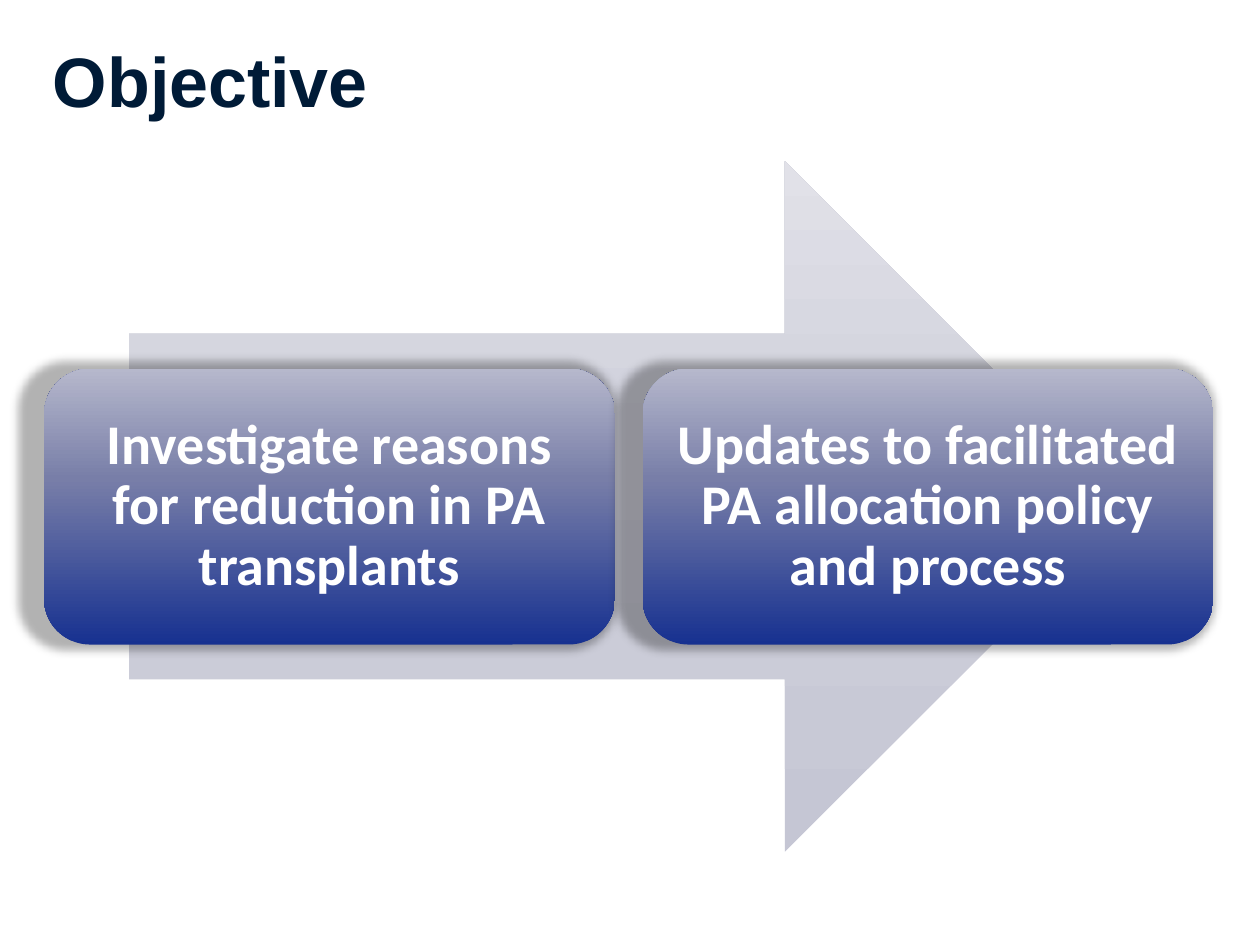
import pptx
import pptx.util
import pptx.oxml
import pptx.dml.color
import pptx.enum.shapes
import pptx.enum.text
import pptx.oxml.ns
from lxml import etree

Inches, Pt = pptx.util.Inches, pptx.util.Pt
SHAPE = pptx.enum.shapes.MSO_SHAPE
ALIGN = pptx.enum.text.PP_ALIGN
MIDDLE = pptx.enum.text.MSO_ANCHOR.MIDDLE

# Content
TITLE = "Objective"
STEPS = [
    "Investigate reasons for reduction in PA transplants",
    "Updates to facilitated PA allocation policy and process",
]

# Look
COLORS = {"title": "001B37", "step_text": "FFFFFF", "shadow": "000000"}
ARROW_STOPS = [(0, "C5C6D4"), (60, "D0D1DC"), (100, "E1E1E8")]
STEP_STOPS = [(0, "173190"), (60, "787EA8"), (100, "B6B8CC")]
TITLE_FONT = {"name": "Arial", "size": Pt(40), "bold": True}
STEP_FONT = {"name": "Calibri", "size": Pt(32), "bold": True}

# Geometry in inches
TITLE_BOX = (0.32, 0.17, 9.56, 0.93)
ARROW_BOX = (1.02, 1.28, 7.95, 5.48)
STEP_LEFT, STEP_W, STEP_H, STEP_GAP = 0.35, 4.53, 2.19, 0.22
STEP_TOP = ARROW_BOX[1] + (ARROW_BOX[3] - STEP_H) / 2


def set_text(shape, text, font, color, align):
    tf = shape.text_frame
    tf.word_wrap = True
    tf.vertical_anchor = MIDDLE
    p = tf.paragraphs[0]
    p.alignment = align
    r = p.add_run()
    r.text = text
    for name, value in font.items():
        setattr(r.font, name, value)
    r.font.color.rgb = pptx.dml.color.RGBColor.from_string(COLORS[color])
    return p


def add_gradient_shape(slide, kind, box, stops):
    sp = slide.shapes.add_shape(kind, *map(Inches, box))
    sp.shadow.inherit = False
    sp.line.fill.background()
    # Three stops, running from bottom to top
    sp.fill.gradient()
    sp.fill.gradient_angle = 90
    gs_list = sp.fill._fill._gradFill.find(pptx.oxml.ns.qn("a:gsLst"))
    for gs in list(gs_list):
        gs_list.remove(gs)
    for position, color in stops:
        gs = etree.SubElement(gs_list, pptx.oxml.ns.qn("a:gs"), pos=str(position * 1000))
        etree.SubElement(gs, pptx.oxml.ns.qn("a:srgbClr"), val=color)
    return sp


def add_shadow(sp):
    effects = sp._element.spPr.find(pptx.oxml.ns.qn("a:effectLst"))
    shadow = etree.SubElement(
        effects, pptx.oxml.ns.qn("a:outerShdw"),
        blurRad=str(Pt(5)), dist=str(Pt(3)), dir="5400000",
        sx="104500", sy="104500", algn="br", rotWithShape="0")
    color = etree.SubElement(shadow, pptx.oxml.ns.qn("a:srgbClr"), val=COLORS["shadow"])
    etree.SubElement(color, pptx.oxml.ns.qn("a:alpha"), val="30000")


prs = pptx.Presentation()
prs.slide_width, prs.slide_height = Inches(10), Inches(7.5)
s = prs.slides.add_slide(prs.slide_layouts[5])

# Title
title = s.shapes.title
title.left, title.top, title.width, title.height = map(Inches, TITLE_BOX)
set_text(title, TITLE, TITLE_FONT, "title", ALIGN.LEFT)

# Background arrow
add_gradient_shape(s, SHAPE.RIGHT_ARROW, ARROW_BOX, ARROW_STOPS)

# Steps
for i, text in enumerate(STEPS):
    left = STEP_LEFT + i * (STEP_W + STEP_GAP)
    sp = add_gradient_shape(s, SHAPE.ROUNDED_RECTANGLE,
                            (left, STEP_TOP, STEP_W, STEP_H), STEP_STOPS)
    add_shadow(sp)
    p = set_text(sp, text, STEP_FONT, "step_text", ALIGN.CENTER)
    p.line_spacing = 0.9
    for side in ("left", "top", "right", "bottom"):
        setattr(sp.text_frame, "margin_" + side, Inches(0.13))

prs.save("out.pptx")
